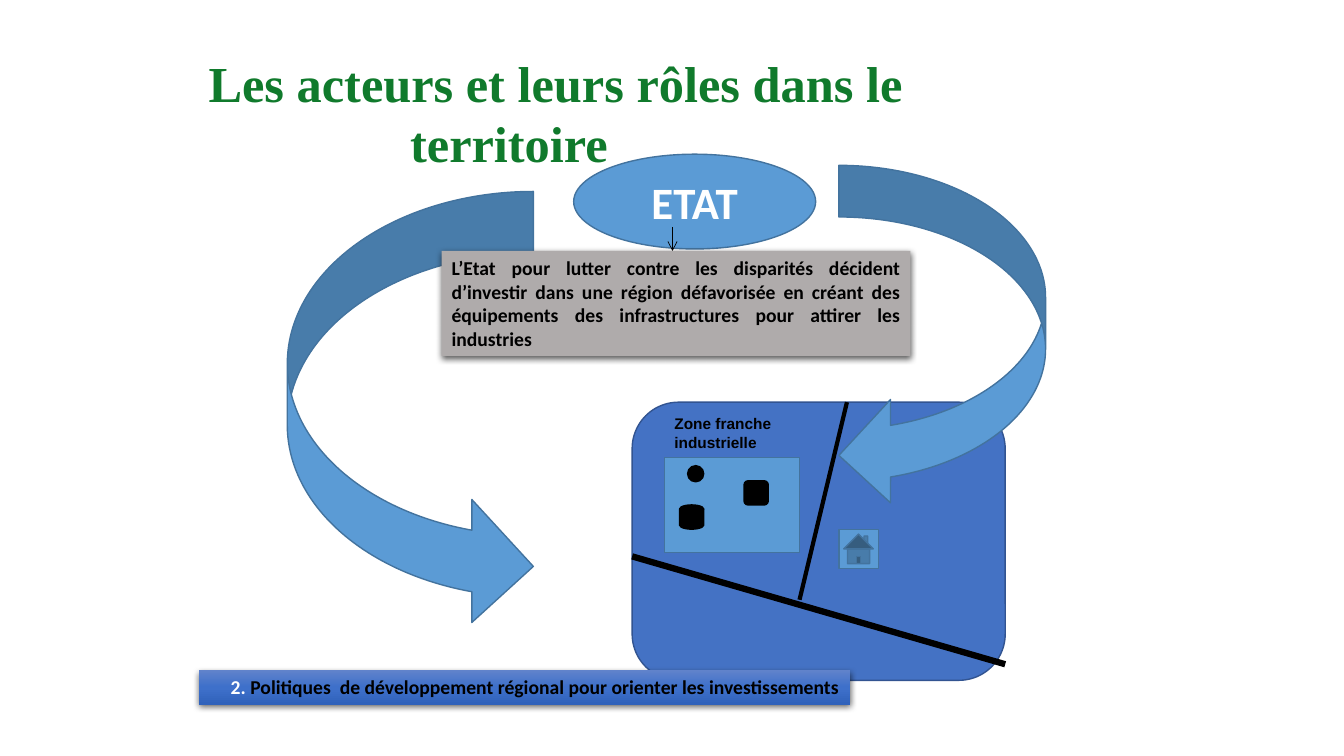
from copy import deepcopy

from lxml import etree
from pptx import Presentation
from pptx.dml.color import RGBColor
from pptx.enum.shapes import MSO_CONNECTOR, MSO_SHAPE
from pptx.enum.text import MSO_ANCHOR, PP_ALIGN
from pptx.oxml.ns import qn
from pptx.util import Inches, Pt

RECT = MSO_SHAPE.RECTANGLE
ROUNDED = MSO_SHAPE.ROUNDED_RECTANGLE
OVAL = MSO_SHAPE.OVAL
DISK = MSO_SHAPE.FLOWCHART_MAGNETIC_DISK
HOME = MSO_SHAPE.ACTION_BUTTON_HOME
ARROW_TO_RIGHT = MSO_SHAPE.CURVED_RIGHT_ARROW
ARROW_TO_LEFT = MSO_SHAPE.CURVED_LEFT_ARROW
STRAIGHT = MSO_CONNECTOR.STRAIGHT
LEFT, CENTER, JUSTIFY = PP_ALIGN.LEFT, PP_ALIGN.CENTER, PP_ALIGN.JUSTIFY
TOP, MIDDLE = MSO_ANCHOR.TOP, MSO_ANCHOR.MIDDLE


def color(value):
    return RGBColor.from_string(value)


class TerritorySlide:
    """Draws the elements of the slide in one shared style."""

    BLUE, BLUE_EDGE = "5B9BD5", "43739E"
    BLACK, WHITE = "000000", "FFFFFF"

    def __init__(self, slide):
        self.shapes = slide.shapes

    def shape(self, kind, box, fill=BLUE, edge=BLUE_EDGE):
        shape = self.shapes.add_shape(kind, *map(Inches, box))
        shape.shadow.inherit = False
        shape.fill.solid()
        shape.fill.fore_color.rgb = color(fill)
        if edge:
            shape.line.color.rgb = color(edge)
            shape.line.width = Pt(1)
        else:
            shape.line.fill.background()
        return shape

    def banner(self, box, fill):
        banner = self.shape(RECT, box, fill, None)
        effects = banner._element.spPr.find(qn("a:effectLst"))
        shadow = etree.SubElement(
            effects, qn("a:outerShdw"), blurRad=str(Pt(4.5)),
            dist=str(Pt(1.5)), dir="5400000", algn="ctr", rotWithShape="0")
        tint = etree.SubElement(shadow, qn("a:srgbClr"), val=self.BLACK)
        etree.SubElement(tint, qn("a:alpha"), val="63000")
        return banner

    def gradient(self, shape, colors):
        shape.fill.gradient()
        shape.fill.gradient_angle = 270
        stops = shape._element.spPr.find(".//" + qn("a:gsLst"))
        while len(stops) < len(colors):
            stops.append(deepcopy(stops[0]))
        for index, stop in enumerate(shape.fill.gradient_stops):
            stop.color.rgb = color(colors[index])
            stop.position = index / (len(colors) - 1)

    def label(self, box):
        return self.shapes.add_textbox(*map(Inches, box))

    def text(self, holder, paragraphs, size, font="Calibri", align=LEFT,
             anchor=TOP):
        frame = holder.text_frame
        frame.word_wrap = True
        frame.vertical_anchor = anchor
        for index, (indent, runs) in enumerate(paragraphs):
            paragraph = frame.add_paragraph() if index else frame.paragraphs[0]
            paragraph.alignment = align
            paragraph._p.get_or_add_pPr().set("marL", str(Inches(indent)))
            for words, tone in runs:
                run = paragraph.add_run()
                run.text = words
                run.font.name = font
                run.font.size = Pt(size)
                run.font.bold = True
                run.font.color.rgb = color(tone)

    def line(self, start, end, width, arrow=False):
        line = self.shapes.add_connector(
            STRAIGHT, *map(Inches, (*start, *end)))
        line.line.color.rgb = color(self.BLACK)
        line.line.width = Pt(width)
        properties = line._element.spPr
        if arrow:
            etree.SubElement(properties.find(qn("a:ln")), qn("a:tailEnd"),
                             type="arrow")
        etree.SubElement(properties, qn("a:effectLst"))


def main():
    deck = Presentation()
    deck.slide_width, deck.slide_height = Inches(13.33), Inches(7.5)
    page = TerritorySlide(deck.slides.add_slide(deck.slide_layouts[6]))
    black, white, green = page.BLACK, page.WHITE, "107A2C"

    page.shape(ROUNDED, (6.27, 3.99, 3.7, 2.76), "4472C4", "325491")
    state = page.shape(OVAL, (5.69, 1.53, 2.4, 0.94))
    page.text(state, [(0, [("ETAT", white)])], 32, align=CENTER, anchor=MIDDLE)
    page.shape(ARROW_TO_RIGHT, (2.85, 1.9, 2.44, 4.33))
    page.shape(ARROW_TO_LEFT, (8.32, 1.64, 2.05, 3.39))

    policies = page.banner((1.97, 6.65, 6.46, 0.34), "3E70CA")
    page.gradient(policies, ["6183CB", "3E70CA", "3062BB"])
    page.text(policies, [(0.22, [
        ("2. ", white),
        ("Politiques  de développement régional pour orienter les "
         "investissements", black)])], 14)

    page.shape(HOME, (8.32, 5.25, 0.39, 0.39))
    page.shape(RECT, (6.59, 4.54, 1.34, 0.94))
    for factory, left, top, side in ((OVAL, 6.82, 4.62, 0.16),
                                     (ROUNDED, 7.38, 4.77, 0.24),
                                     (DISK, 6.74, 5.01, 0.24)):
        page.shape(factory, (left, top, side, side), black, black)
    page.line((6.27, 5.52), (9.97, 6.59), 4.5)
    page.line((7.93, 5.95), (8.4, 3.99), 3)

    free_zone = page.label((6.59, 4.06, 1.49, 0.47))
    page.text(free_zone, [(0, [("Zone franche industrielle", black)])], 11,
              "Arial")
    page.line((6.67, 2.25), (6.67, 2.49), 0.5, arrow=True)
    state_role = page.banner((4.38, 2.49, 4.65, 1.04), "AFABAB")
    page.text(state_role, [(0, [
        ("L’Etat pour lutter contre les disparités décident d’investir dans "
         "une région défavorisée en créant des équipements des "
         "infrastructures pour attirer les industries", black)])], 14,
        align=JUSTIFY)

    title = page.label((1.97, 0.46, 9.11, 1.31))
    page.text(title, [(0, [("Les acteurs et leurs rôles dans le", green)]),
                      (2, [("territoire", green)])],
              36, "Times New Roman", anchor=MIDDLE)
    deck.save("out.pptx")


if __name__ == "__main__":
    main()
